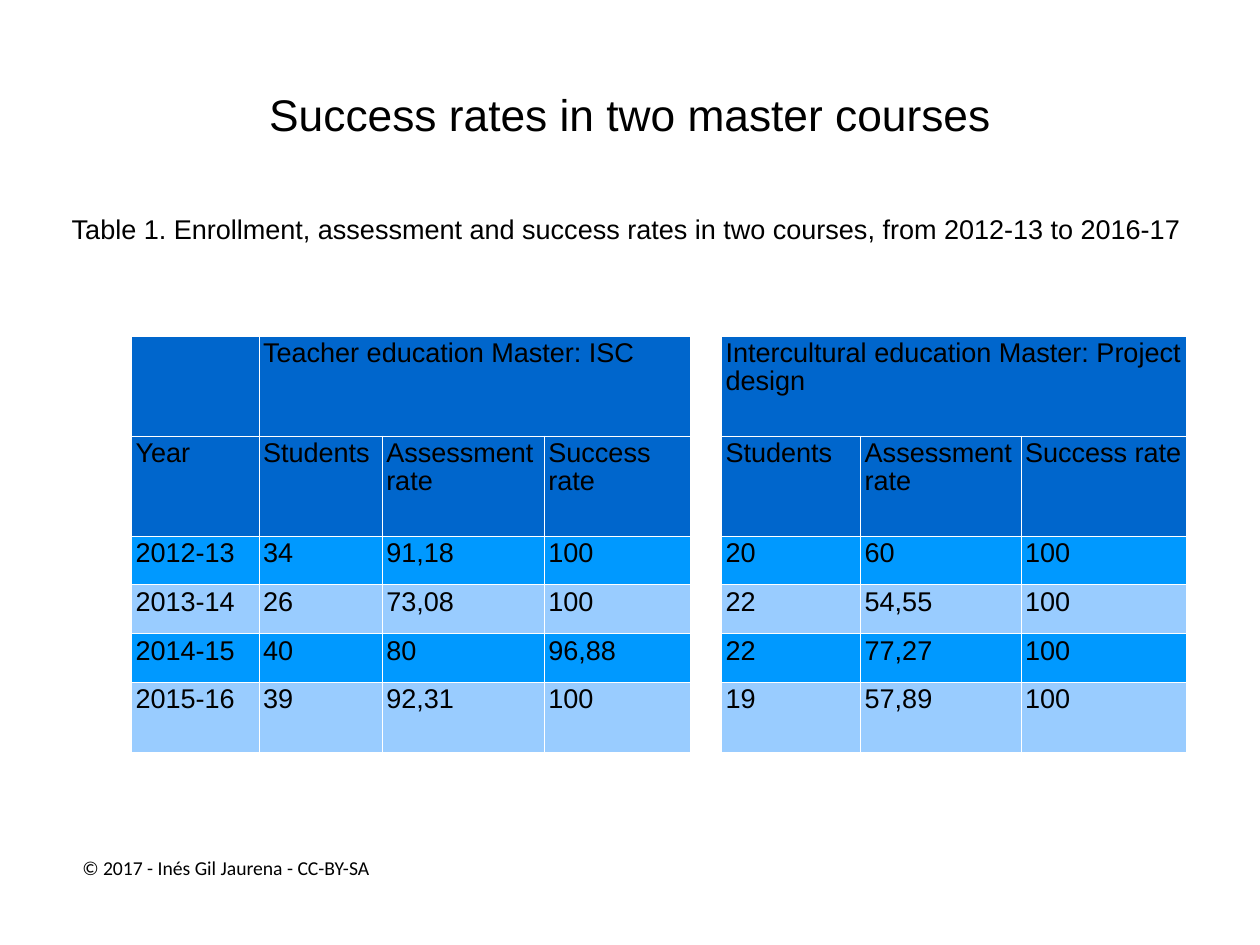
from lxml.etree import SubElement
from pptx import Presentation
from pptx.dml.color import RGBColor
from pptx.enum.text import MSO_ANCHOR, PP_ALIGN
from pptx.oxml.ns import qn
from pptx.util import Inches, Pt

BLACK = RGBColor(0x00, 0x00, 0x00)
WHITE = RGBColor(0xFF, 0xFF, 0xFF)
NAVY = RGBColor(0x00, 0x66, 0xCC)
BLUE = RGBColor(0x00, 0x99, 0xFF)
PALE = RGBColor(0x99, 0xCC, 0xFF)

GAP = 4
WIDTHS = [1.44, 1.39, 1.83, 1.65, 0.35, 1.57, 1.81, 1.87]
HEIGHTS = [1.13, 1.13, 0.55, 0.55, 0.55, 0.79]
FILLS = [NAVY, NAVY, BLUE, PALE, BLUE, PALE]
HEADS = ["Students", "Assessment rate", "Success rate"]
ROWS = [
    ["", "Teacher education Master: ISC", "", "", "",
     "Intercultural education Master: Project design", "", ""],
    ["Year", *HEADS, "", *HEADS],
    ["2012-13", "34", "91,18", "100", "", "20", "60", "100"],
    ["2013-14", "26", "73,08", "100", "", "22", "54,55", "100"],
    ["2014-15", "40", "80", "96,88", "", "22", "77,27", "100"],
    ["2015-16", "39", "92,31", "100", "", "19", "57,89", "100"],
]


def write(para, text, size, font="Arial", space=0.93, before=0):
    para.line_spacing = space
    para.space_before = Pt(before)
    run = para.add_run()
    run.text = text
    run.font.size = Pt(size)
    run.font.name = font
    run.font.color.rgb = BLACK


def add_text(slide, box, inset, anchor, align):
    frame = slide.shapes.add_textbox(*map(Inches, box)).text_frame
    frame.word_wrap = True
    frame.margin_left = frame.margin_right = Inches(inset)
    frame.margin_top = frame.margin_bottom = Inches(inset)
    frame.vertical_anchor = anchor
    para = frame.paragraphs[0]
    para.alignment = align
    return para


def add_title(slide, box):
    para = add_text(slide, box, 0, MSO_ANCHOR.MIDDLE, PP_ALIGN.CENTER)
    write(para, "Success rates in two master courses", 36)


def add_caption(slide, box):
    para = add_text(slide, box, 0, MSO_ANCHOR.TOP, PP_ALIGN.LEFT)
    write(para, "Table 1. Enrollment, assessment and success rates "
                "in two courses, from 2012-13 to 2016-17", 22, before=18)


def add_footer(slide, box):
    para = add_text(slide, box, 0.06, MSO_ANCHOR.MIDDLE, PP_ALIGN.CENTER)
    write(para, "© 2017 - Inés Gil Jaurena - CC-BY-SA", 16, "Calibri", 1)


def add_border(cell):
    props = cell._tc.get_or_add_tcPr()
    for side in ("a:lnL", "a:lnR", "a:lnT", "a:lnB"):
        line = SubElement(props, qn(side), w=str(Pt(0.25)))
        fill = SubElement(line, qn("a:solidFill"))
        SubElement(fill, qn("a:srgbClr"), val=str(WHITE))


def style_cell(cell, text, color):
    add_border(cell)
    cell.fill.solid()
    cell.fill.fore_color.rgb = color
    cell.margin_left = cell.margin_right = Inches(0.05)
    cell.margin_top = cell.margin_bottom = Inches(0.05)
    if text:
        write(cell.text_frame.paragraphs[0], text, 22, before=5)


def add_rates(slide, left, top):
    table = slide.shapes.add_table(
        len(ROWS), len(WIDTHS), Inches(left), Inches(top),
        Inches(sum(WIDTHS)), Inches(sum(HEIGHTS))).table
    for col, width in zip(table.columns, WIDTHS):
        col.width = Inches(width)
    for row, height in zip(table.rows, HEIGHTS):
        row.height = Inches(height)
    for first in (1, GAP + 1):
        table.cell(0, first).merge(table.cell(0, first + 2))
    for r, (texts, fill) in enumerate(zip(ROWS, FILLS)):
        for c, text in enumerate(texts):
            style_cell(table.cell(r, c), text, WHITE if c == GAP else fill)


def main():
    deck = Presentation()
    deck.slide_width = Inches(14.22)
    deck.slide_height = Inches(10.67)
    slide = deck.slides.add_slide(deck.slide_layouts[6])
    add_title(slide, (0.71, 0.43, 12.8, 1.78))
    add_caption(slide, (0.81, 2.43, 12.8, 7.04))
    add_rates(slide, 1.48, 3.79)
    add_footer(slide, (0.62, 9.61, 3.86, 0.38))
    deck.save("out.pptx")


if __name__ == "__main__":
    main()
